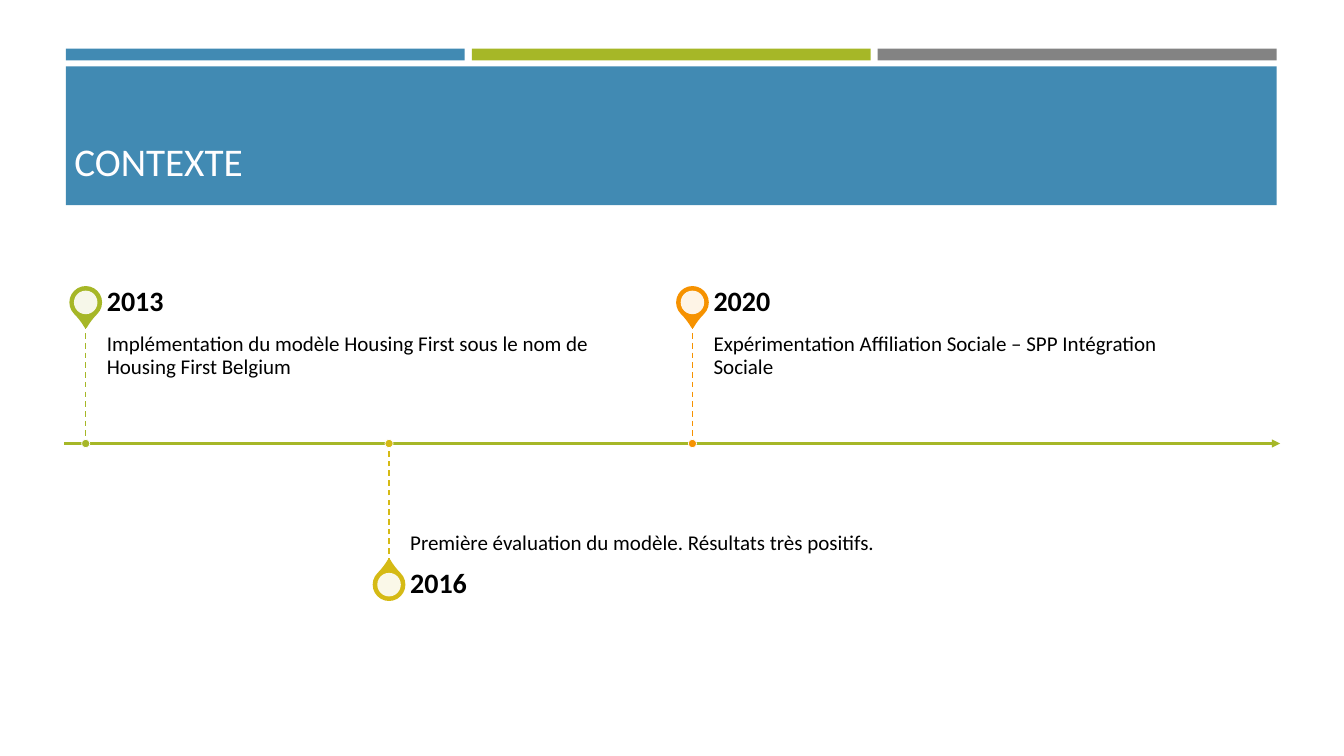
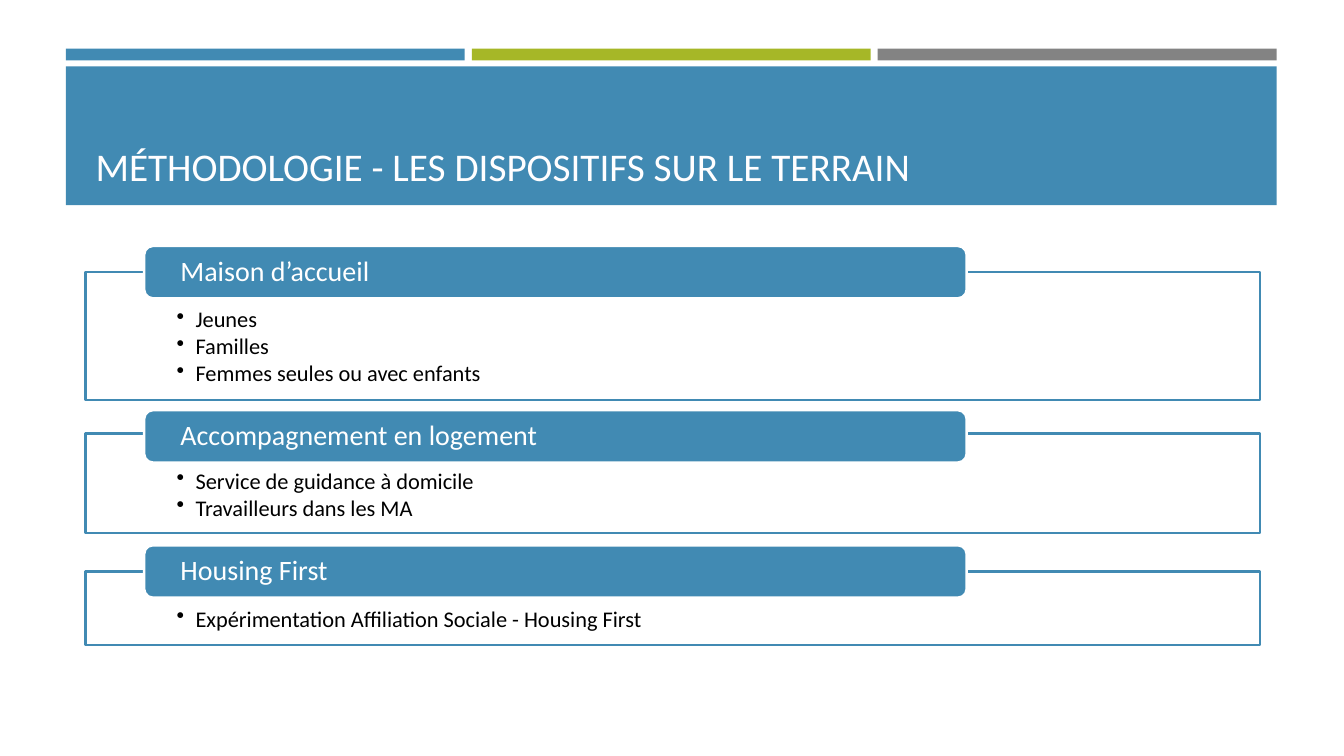
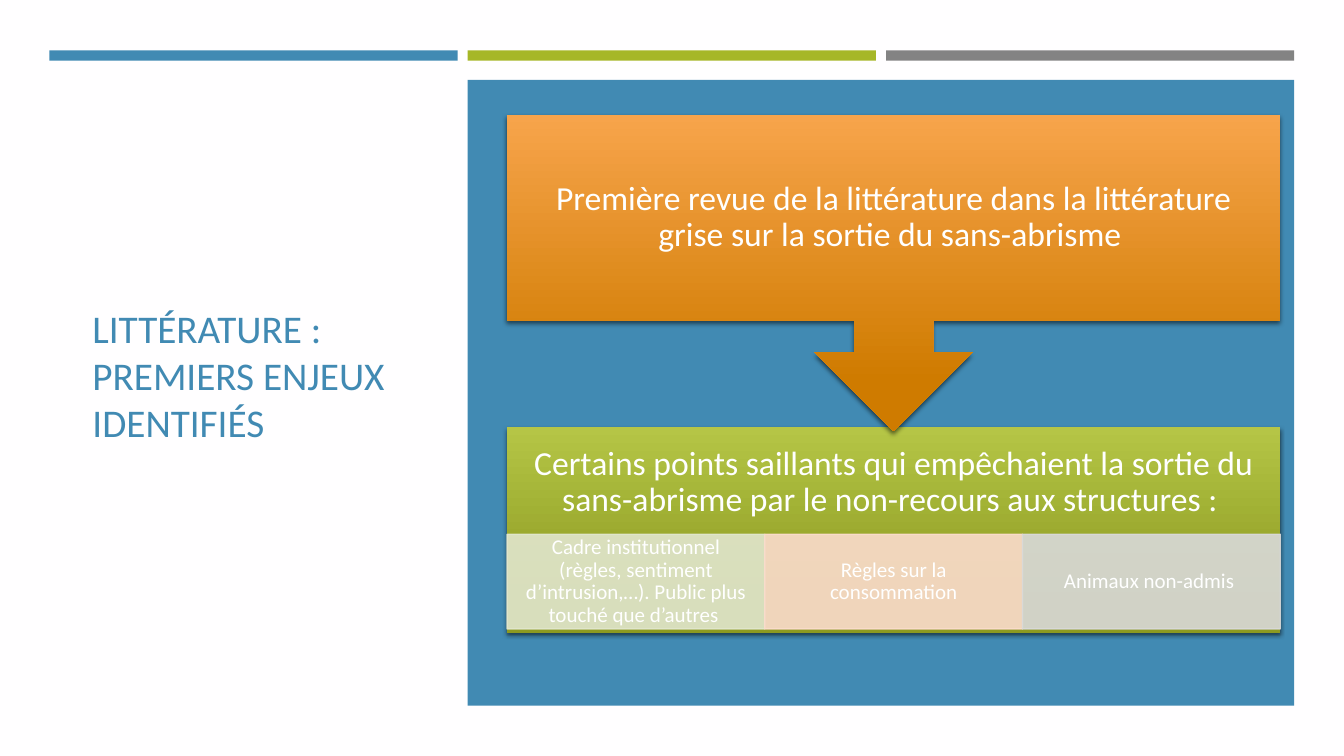
from dataclasses import dataclass
from typing import Optional

from lxml.etree import SubElement
from pptx import Presentation
from pptx.dml.color import RGBColor
from pptx.enum.dml import MSO_LINE
from pptx.enum.shapes import MSO_CONNECTOR, MSO_SHAPE
from pptx.enum.text import MSO_ANCHOR, PP_ALIGN
from pptx.oxml.ns import qn
from pptx.util import Pt

BLUE = RGBColor(0x41, 0x8A, 0xB3)
GREEN = RGBColor(0xA6, 0xB7, 0x27)
GRAY = RGBColor(0x83, 0x83, 0x83)
GOLD = RGBColor(0xD5, 0xBA, 0x15)
ORANGE = RGBColor(0xF6, 0x92, 0x00)
WHITE = RGBColor(0xFF, 0xFF, 0xFF)
OFF_WHITE = RGBColor(0xFF, 0xFE, 0xFF)
BLACK = RGBColor(0, 0, 0)
PALE_GREEN = RGBColor(0xE1, 0xE6, 0xCD)
PALE_ORANGE = RGBColor(0xFB, 0xDC, 0xCC)
PALE_GRAY = RGBColor(0xD9, 0xD9, 0xD9)
ORANGE_GRADIENT = (RGBColor(0xF7, 0xA4, 0x4B), RGBColor(0xCF, 0x7B, 0x00))
GREEN_GRADIENT = (RGBColor(0xB5, 0xC5, 0x46), RGBColor(0x8C, 0x9A, 0x21))
FONT = "Calibri"
TITLE_INSETS = (7.2, 3.6, 7.2, 3.6)


@dataclass(frozen=True)
class Box:
    left: float
    top: float
    width: float
    height: float

    def lengths(self):
        return Pt(self.left), Pt(self.top), Pt(self.width), Pt(self.height)


@dataclass(frozen=True)
class Style:
    size: float
    color: RGBColor
    bold: bool = False
    align: PP_ALIGN = PP_ALIGN.LEFT
    spacing: float = 0.9
    after: float = 0
    bullet: bool = False


@dataclass(frozen=True)
class Event:
    year: str
    text: str
    color: RGBColor
    above: bool


@dataclass(frozen=True)
class Section:
    heading: str
    items: tuple[str, ...]
    tab_top: float
    top: float
    height: float


@dataclass(frozen=True)
class Issue:
    text: str
    color: RGBColor


YEAR = Style(20, BLACK, bold=True)
DETAIL = Style(15, BLACK)
HEADING = Style(20, WHITE)
BULLET = Style(16, BLACK, after=2, bullet=True)
STATEMENT = Style(24, WHITE, align=PP_ALIGN.CENTER)
ISSUE = Style(15, WHITE, align=PP_ALIGN.CENTER)

EVENTS = (
    Event("2013", "Implémentation du modèle Housing First sous le nom de Housing First Belgium", GREEN, True),
    Event("2016", "Première évaluation du modèle. Résultats très positifs.", GOLD, False),
    Event("2020", "Expérimentation Affiliation Sociale – SPP Intégration Sociale", ORANGE, True),
)
SECTIONS = (
    Section("Maison d’accueil", ("Jeunes", "Familles", "Femmes seules ou avec enfants"), 175.7, 194.4, 91.4),
    Section("Accompagnement en logement", ("Service de guidance à domicile", "Travailleurs dans les MA"),
            293, 309.6, 71.3),
    Section("Housing First", ("Expérimentation Affiliation Sociale - Housing First",), 389.5, 408.2, 52.6),
)
ISSUES = (
    Issue("Cadre institutionnel (règles, sentiment d’intrusion,…). Public plus touché que d’autres ", PALE_GREEN),
    Issue("Règles sur la consommation", PALE_ORANGE),
    Issue("Animaux non-admis ", PALE_GRAY),
)


# Drawing helpers
def set_alpha(fill, percent: int) -> None:
    color = fill._xPr.find(qn("a:solidFill")).find(qn("a:srgbClr"))
    SubElement(color, qn("a:alpha"), val=str(percent * 1000))


def add_shape(s, kind: MSO_SHAPE, box: Box, fill: RGBColor,
              line: Optional[RGBColor] = None, width: float = 1.75, alpha: int = 100):
    sp = s.shapes.add_shape(kind, *box.lengths())
    sp.shadow.inherit = False
    sp.fill.solid()
    sp.fill.fore_color.rgb = fill
    if line is None:
        sp.line.fill.background()
    else:
        sp.line.color.rgb = line
        sp.line.width = Pt(width)
    if alpha < 100:
        set_alpha(sp.fill, alpha)
    return sp


def add_disc(s, x: float, y: float, size: float, fill: RGBColor, **kw):
    return add_shape(s, MSO_SHAPE.OVAL, Box(x - size / 2, y - size / 2, size, size), fill, **kw)


def add_gradient_shape(s, kind: MSO_SHAPE, box: Box, colors: tuple[RGBColor, RGBColor]):
    sp = add_shape(s, kind, box, colors[0])
    sp.fill.gradient()
    sp.fill.gradient_angle = 270
    for stop, color, position in zip(sp.fill.gradient_stops, colors, (0, 0.84)):
        stop.color.rgb = color
        stop.position = position
    effects = sp._element.spPr.find(qn("a:effectLst"))
    shadow = SubElement(effects, qn("a:outerShdw"), blurRad=str(Pt(3)), dist=str(Pt(2)),
                        dir="5400000", rotWithShape="0")
    color = SubElement(shadow, qn("a:srgbClr"), val="000000")
    SubElement(color, qn("a:alpha"), val="55000")
    return sp


def add_line(s, x1: float, y1: float, x2: float, y2: float, color: RGBColor, width: float):
    cxn = s.shapes.add_connector(MSO_CONNECTOR.STRAIGHT, Pt(x1), Pt(y1), Pt(x2), Pt(y2))
    cxn.line.color.rgb = color
    cxn.line.width = Pt(width)
    SubElement(cxn._element.spPr, qn("a:effectLst"))
    return cxn


def write(sp, texts: tuple[str, ...], style: Style, insets: tuple[float, float, float, float],
          anchor: MSO_ANCHOR = MSO_ANCHOR.MIDDLE) -> None:
    tf = sp.text_frame
    tf.word_wrap = True
    tf.vertical_anchor = anchor
    tf.margin_left, tf.margin_top, tf.margin_right, tf.margin_bottom = map(Pt, insets)
    for i, text in enumerate(texts):
        p = tf.add_paragraph() if i else tf.paragraphs[0]
        p.alignment = style.align
        p.line_spacing = style.spacing
        p.space_after = Pt(style.after)
        if style.bullet:
            pPr = p._p.get_or_add_pPr()
            pPr.set("marL", str(Pt(13.5)))
            pPr.set("indent", str(-Pt(13.5)))
            SubElement(pPr, qn("a:buChar"), char="•")
        r = p.add_run()
        r.text = text
        r.font.name = FONT
        r.font.size = Pt(style.size)
        r.font.bold = style.bold
        r.font.color.rgb = style.color


def add_text(s, box: Box, text: str, style: Style, insets: tuple[float, float, float, float],
             anchor: MSO_ANCHOR = MSO_ANCHOR.MIDDLE) -> None:
    write(s.shapes.add_textbox(*box.lengths()), (text,), style, insets, anchor)


# Parts the slides share
def add_bands(s, first: Box, gap: float) -> None:
    for i, color in enumerate((BLUE, GREEN, GRAY)):
        left = first.left + i * (first.width + gap)
        add_shape(s, MSO_SHAPE.RECTANGLE, Box(left, first.top, first.width, first.height), color)


def add_title(s, box: Box, text: str, color: RGBColor, anchor: MSO_ANCHOR) -> None:
    add_text(s, box, text, Style(28, color, spacing=1), TITLE_INSETS, anchor)


def add_header(s, title: str, box: Box) -> None:
    add_bands(s, Box(47, 34.8, 285, 8.4), 5)
    add_shape(s, MSO_SHAPE.RECTANGLE, Box(47, 47.4, 865, 99.2), BLUE)
    add_title(s, box, title, OFF_WHITE, MSO_ANCHOR.BOTTOM)


# Slide 1: timeline
def add_event(s, event: Event, x: float, axis: float) -> None:
    stem, reach, radius, year_height = 85.7, 100.8, 10.8, 30.2
    side = -1 if event.above else 1
    pin_y = axis + side * reach
    pin = add_shape(s, MSO_SHAPE.TEAR, Box(x - radius, pin_y - radius, 2 * radius, 2 * radius),
                    event.color, event.color)
    pin.adjustments[0] = 1.15
    pin.rotation = 135 if event.above else 315
    add_disc(s, x, pin_y, 16.8, WHITE, alpha=90)

    left, width = x + 15.1, 360.7
    if event.above:
        detail_top, year_top = axis - stem, axis - stem - year_height
        insets, anchor = (0, 7.2, 7.2, 11.5), MSO_ANCHOR.TOP
    else:
        detail_top, year_top = axis, axis + stem
        insets, anchor = (0, 11.5, 0, 7.2), MSO_ANCHOR.BOTTOM
    add_text(s, Box(left, detail_top, width, stem), event.text, DETAIL, insets, anchor)
    add_text(s, Box(left, year_top, width, year_height), event.year, YEAR, (0, 0, 10, 0))

    add_line(s, x, axis + side * stem, x, axis, event.color, 1).line.dash_style = MSO_LINE.DASH
    add_disc(s, x, axis, 5.8, event.color, line=WHITE, width=0.5)


def build_context(s) -> None:
    add_header(s, "CONTEXTE", Box(46, 55.4, 868, 80))
    axis = 316.8
    arrow = add_line(s, 46, axis, 914.4, axis, GREEN, 1.5)
    SubElement(arrow.line._get_or_add_ln(), qn("a:tailEnd"), type="triangle")
    for i, event in enumerate(EVENTS):
        add_event(s, event, 61.2 + i * 216.7, axis)


# Slide 2: framed lists
def build_method(s) -> None:
    add_header(s, "MÉTHODOLOGIE - LES DISPOSITIFS SUR LE TERRAIN", Box(61.2, 54, 838.8, 85))
    for section in SECTIONS:
        frame = add_shape(s, MSO_SHAPE.RECTANGLE, Box(61.2, section.top, 838.8, section.height),
                          WHITE, BLUE, alpha=90)
        write(frame, section.items, BULLET, (65, 26, 65, 8.6), MSO_ANCHOR.TOP)
        tab = add_shape(s, MSO_SHAPE.ROUNDED_RECTANGLE, Box(103, section.tab_top, 587.5, 37.4), BLUE, WHITE)
        write(tab, (section.heading,), HEADING, (24, 1.8, 24, 1.8))


# Slide 3: literature
def build_literature(s) -> None:
    s.background.fill.solid()
    s.background.fill.fore_color.rgb = OFF_WHITE
    add_title(s, Box(59, 82, 240.5, 371), "LITTÉRATURE : PREMIERS ENJEUX IDENTIFIÉS", BLUE, MSO_ANCHOR.MIDDLE)
    add_bands(s, Box(35.3, 36, 291.6, 7.4), 7.2)
    add_shape(s, MSO_SHAPE.RECTANGLE, Box(334.1, 57, 590.4, 447), BLUE)

    left, width, pad = 362.2, 552.3, 13.7
    points = add_gradient_shape(s, MSO_SHAPE.RECTANGLE, Box(left, 305.3, width, 146.9), GREEN_GRADIENT)
    write(points, ("Certains points saillants qui empêchaient la sortie du sans-abrisme "
                   "par le non-recours aux structures : ",), STATEMENT, (pad, pad, pad, 81.4))

    cell = width / len(ISSUES)
    for i, issue in enumerate(ISSUES):
        sp = add_shape(s, MSO_SHAPE.RECTANGLE, Box(left + i * cell, 381.6, cell, 67.7),
                       issue.color, issue.color, 1, alpha=90)
        set_alpha(sp.line.fill, 90)
        write(sp, (issue.text,), ISSUE, (8.6, 1.4, 8.6, 1.4))

    review = add_gradient_shape(s, MSO_SHAPE.DOWN_ARROW_CALLOUT, Box(left, 82, width, 226), ORANGE_GRADIENT)
    for i, value in enumerate((0.25, 0.25, 0.25, 0.65)):
        review.adjustments[i] = value
    write(review, ("Première revue de la littérature dans la littérature grise "
                   "sur la sortie du sans-abrisme ",), STATEMENT, (pad, pad, pad, pad))


def main() -> None:
    prs = Presentation()
    prs.slide_width, prs.slide_height = Pt(960), Pt(540)
    for build in (build_context, build_method, build_literature):
        build(prs.slides.add_slide(prs.slide_layouts[6]))
    prs.save("out.pptx")


if __name__ == "__main__":
    main()
